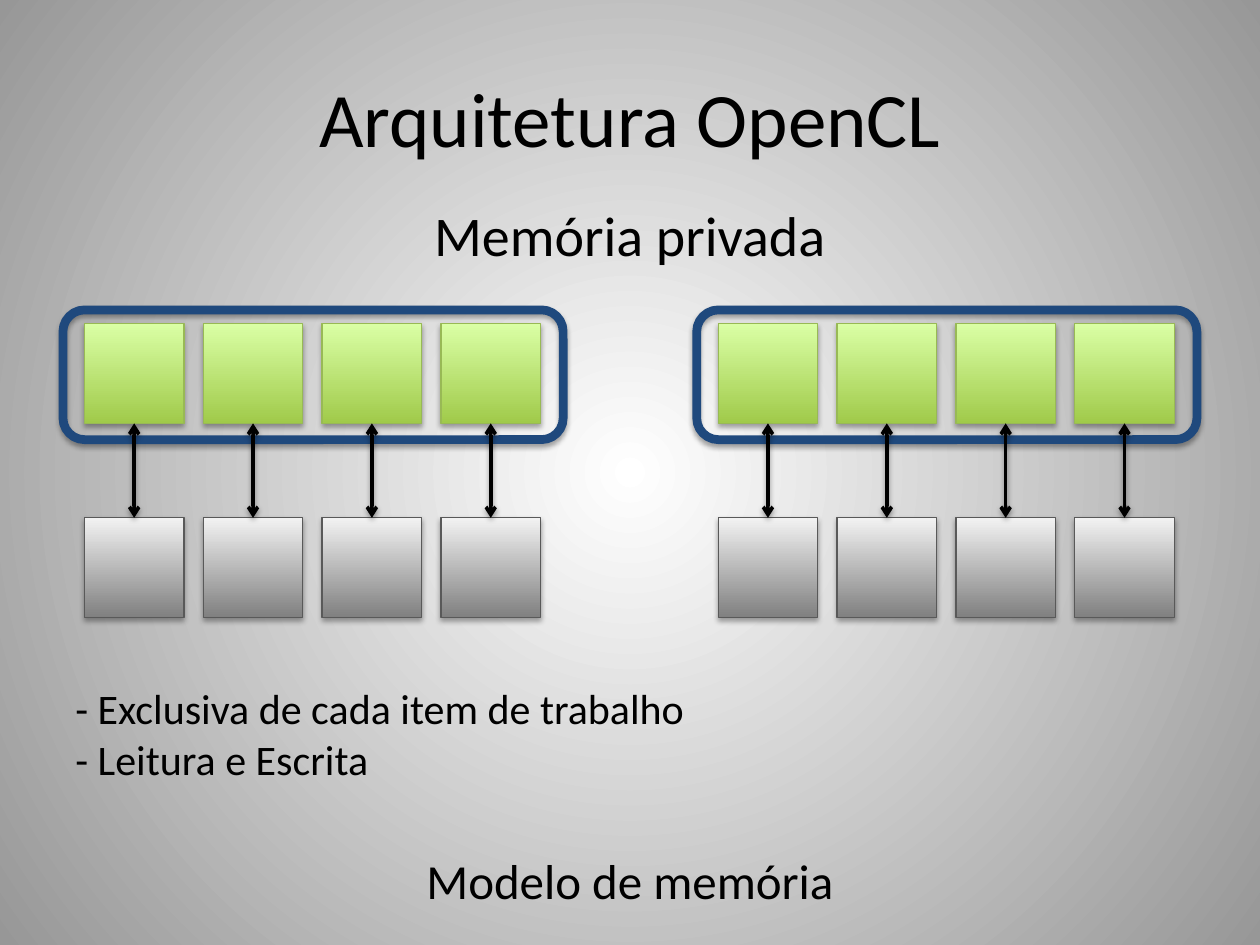
from dataclasses import dataclass

from lxml import etree
from pptx import Presentation
from pptx.dml.color import RGBColor
from pptx.enum.shapes import MSO_CONNECTOR, MSO_SHAPE
from pptx.enum.text import MSO_ANCHOR, PP_ALIGN
from pptx.oxml.ns import qn
from pptx.util import Inches, Pt

RECT, ROUND_RECT = MSO_SHAPE.RECTANGLE, MSO_SHAPE.ROUNDED_RECTANGLE
STRAIGHT = MSO_CONNECTOR.STRAIGHT
LEFT, CENTER = PP_ALIGN.LEFT, PP_ALIGN.CENTER
MIDDLE = MSO_ANCHOR.MIDDLE
BOTTOM_SIDE, TOP_SIDE = 2, 0

BLACK = RGBColor(0x00, 0x00, 0x00)
WHITE = RGBColor(0xFF, 0xFF, 0xFF)
BACKDROP_GRAY = RGBColor(0x97, 0x97, 0x97)
NAVY = RGBColor(0x1F, 0x49, 0x7D)
FONT = "Calibri"

# Slide grid, in inches
SLIDE_W, SLIDE_H = 10, 7.5
MARGIN = 0.5
CONTENT_W = SLIDE_W - 2 * MARGIN
FRAME_W, FRAME_H, FRAME_TOP = 3.97, 1.03, 2.46
FRAME_LEFTS = (MARGIN, SLIDE_W - MARGIN - FRAME_W)
COLUMNS = 4
CELL = 0.79
CELL_INSET = 0.17
PITCH = 2.83 / (COLUMNS - 1)


@dataclass(frozen=True)
class CellRow:
    top: float
    bottom_color: RGBColor
    top_color: RGBColor
    border: RGBColor


@dataclass(frozen=True)
class Caption:
    top: float
    height: float
    size: int
    align: PP_ALIGN
    lines: tuple[str, ...]


MEMORY = CellRow(2.57, RGBColor(0xA0, 0xCA, 0x4A), RGBColor(0xDA, 0xFF, 0xA5),
                 RGBColor(0x98, 0xB9, 0x55))
WORK_ITEMS = CellRow(4.11, RGBColor(0x80, 0x80, 0x80), RGBColor(0xF2, 0xF2, 0xF2),
                     RGBColor(0x59, 0x59, 0x59))
CAPTIONS = (
    Caption(6.7, 0.57, 28, CENTER, ("Modelo de memória",)),
    Caption(1.54, 0.64, 32, CENTER, ("Memória privada",)),
    Caption(5.37, 0.91, 24, LEFT,
            ("- Exclusiva de cada item de trabalho", "- Leitura e Escrita")),
)


def add_child(parent, tag: str, **attrs: str):
    return etree.SubElement(parent, qn(tag), attrs)


def set_stops(fill, first: RGBColor, last: RGBColor) -> None:
    fill.gradient()
    for stop, color in zip(fill.gradient_stops, (first, last)):
        stop.color.rgb = color


def set_background(slide) -> None:
    """Radial gradient, light in the middle."""
    set_stops(slide.background.fill, WHITE, BACKDROP_GRAY)
    grad = slide.element.find(".//" + qn("a:gradFill"))
    grad.remove(grad.find(qn("a:lin")))
    radial = add_child(grad, "a:path", path="circle")
    add_child(radial, "a:fillToRect", l="50000", t="50000", r="50000", b="50000")


def add_shadow(sp, distance: float, opacity: int) -> None:
    """Soft black shadow straight below; call after the line is set."""
    sp_pr = sp._element.spPr
    effects = sp_pr.find(qn("a:effectLst"))
    if effects is None:
        effects = add_child(sp_pr, "a:effectLst")
    shadow = add_child(effects, "a:outerShdw", blurRad=str(Pt(3.1)),
                       dist=str(Pt(distance)), dir="5400000", rotWithShape="0")
    color = add_child(shadow, "a:srgbClr", val=str(BLACK))
    add_child(color, "a:alpha", val=str(opacity * 1000))


def write_lines(tf, lines: tuple[str, ...], size: int, align: PP_ALIGN) -> None:
    tf.word_wrap = True
    for i, line in enumerate(lines):
        p = tf.add_paragraph() if i else tf.paragraphs[0]
        p.alignment = align
        r = p.add_run()
        r.text = line
        r.font.name, r.font.size = FONT, Pt(size)
        r.font.color.rgb = BLACK


def add_title(slide, text: str) -> None:
    title = slide.shapes.title
    title.left, title.top = Inches(MARGIN), Inches(0.3)
    title.width, title.height = Inches(CONTENT_W), Inches(1.25)
    title.text_frame.vertical_anchor = MIDDLE
    write_lines(title.text_frame, (text,), 44, CENTER)


def add_caption(slide, caption: Caption) -> None:
    box = slide.shapes.add_textbox(Inches(MARGIN), Inches(caption.top),
                                   Inches(CONTENT_W), Inches(caption.height))
    write_lines(box.text_frame, caption.lines, caption.size, caption.align)


def add_frame(slide, left: float) -> None:
    sp = slide.shapes.add_shape(ROUND_RECT, Inches(left), Inches(FRAME_TOP),
                                Inches(FRAME_W), Inches(FRAME_H))
    sp.fill.background()
    sp.line.color.rgb, sp.line.width = NAVY, Pt(5)
    sp.shadow.inherit = False
    add_shadow(sp, 1.8, 35)


def add_cell(slide, left: float, row: CellRow):
    sp = slide.shapes.add_shape(RECT, Inches(left), Inches(row.top),
                                Inches(CELL), Inches(CELL))
    set_stops(sp.fill, row.bottom_color, row.top_color)
    sp.fill.gradient_angle = 90
    sp.line.color.rgb, sp.line.width = row.border, Pt(0.75)
    sp.shadow.inherit = False
    add_shadow(sp, 1.8, 35)
    return sp


def add_double_arrow(slide, upper, lower) -> None:
    cxn = slide.shapes.add_connector(STRAIGHT, 0, 0, 0, 0)
    cxn.begin_connect(upper, BOTTOM_SIDE)
    cxn.end_connect(lower, TOP_SIDE)
    cxn.line.color.rgb, cxn.line.width = BLACK, Pt(2)
    ln = cxn._element.spPr.find(qn("a:ln"))
    for end in ("a:headEnd", "a:tailEnd"):
        add_child(ln, end, type="arrow")
    add_shadow(cxn, 1.6, 38)


def add_work_group(slide, left: float) -> None:
    """Framed private memories, each linked to its work item."""
    add_frame(slide, left)
    xs = [left + CELL_INSET + i * PITCH for i in range(COLUMNS)]
    memories = [add_cell(slide, x, MEMORY) for x in xs]
    items = [add_cell(slide, x, WORK_ITEMS) for x in xs]
    for memory, item in zip(memories, items):
        add_double_arrow(slide, memory, item)


def main() -> None:
    prs = Presentation()
    prs.slide_width, prs.slide_height = Inches(SLIDE_W), Inches(SLIDE_H)
    slide = prs.slides.add_slide(prs.slide_layouts.get_by_name("Title Only"))
    set_background(slide)
    add_title(slide, "Arquitetura OpenCL")
    for caption in CAPTIONS:
        add_caption(slide, caption)
    for left in FRAME_LEFTS:
        add_work_group(slide, left)
    prs.save("out.pptx")


if __name__ == "__main__":
    main()
